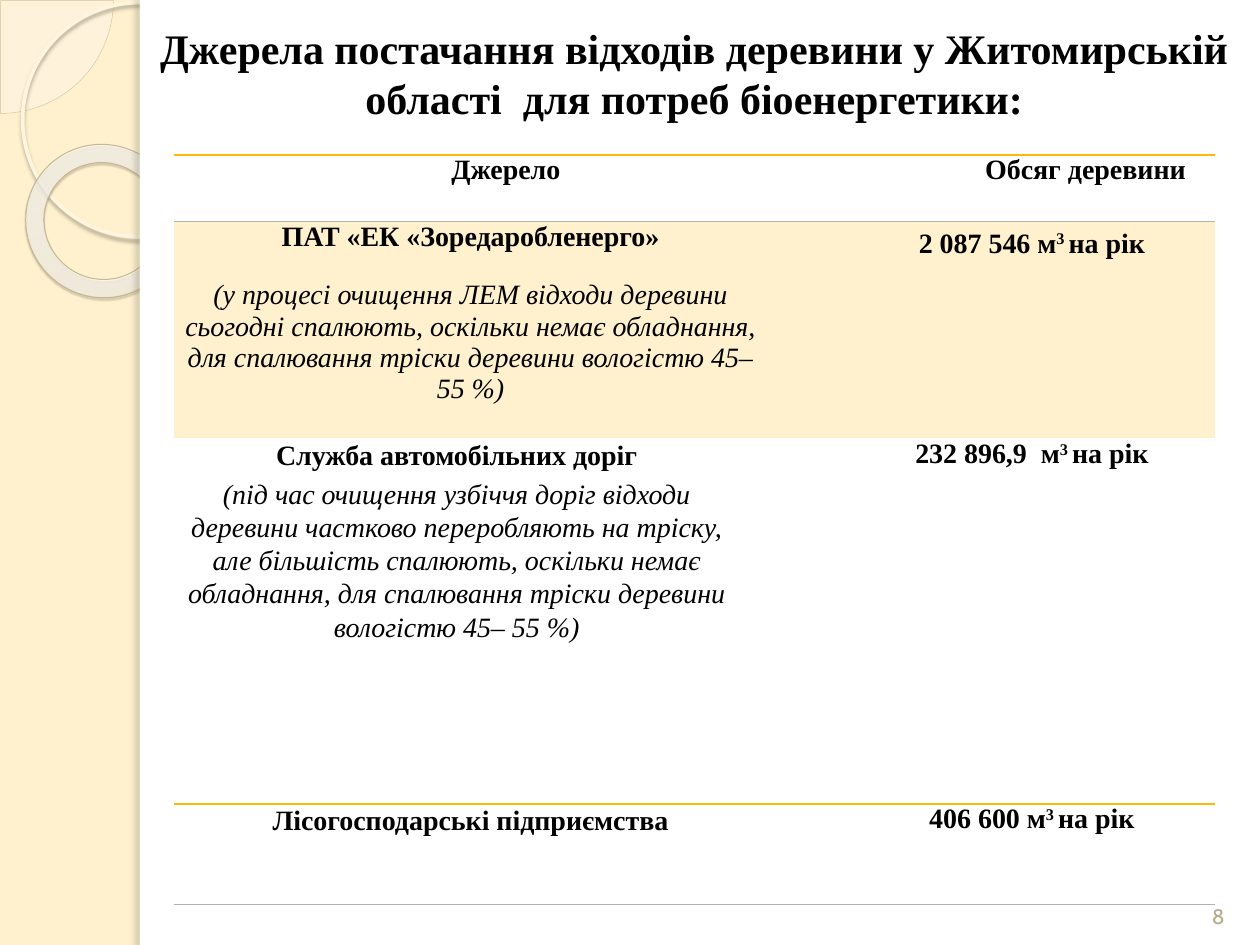
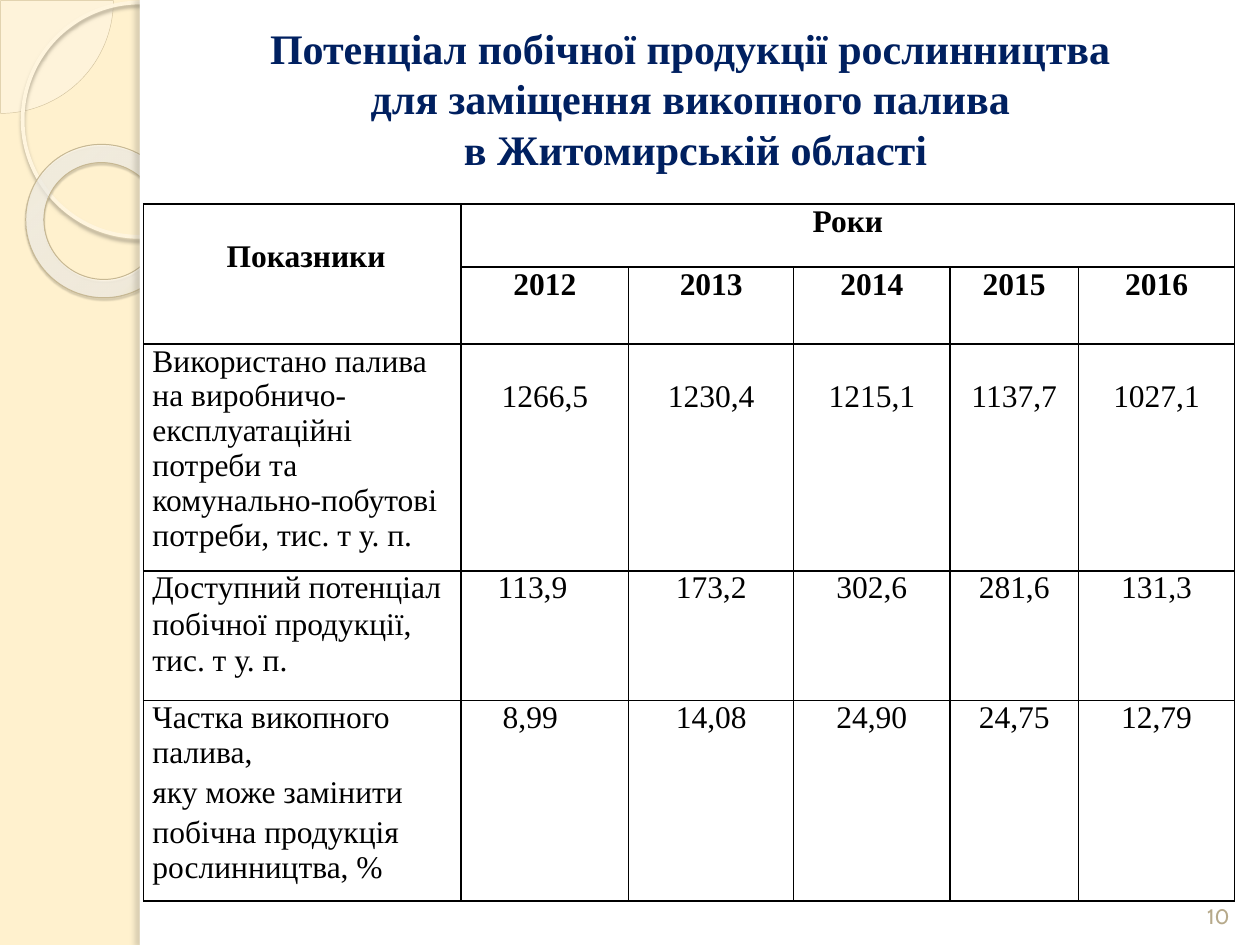
from lxml import etree
from pptx import Presentation
from pptx.dml.color import RGBColor
from pptx.enum.shapes import MSO_SHAPE
from pptx.enum.text import MSO_ANCHOR, PP_ALIGN
from pptx.oxml import parse_xml
from pptx.oxml.ns import nsdecls, qn
from pptx.util import Emu, Inches, Pt

LEFT, CENTER = PP_ALIGN.LEFT, PP_ALIGN.CENTER
BOTTOM = MSO_ANCHOR.BOTTOM
PIE, RING, DONUT, BAR = MSO_SHAPE.PIE, MSO_SHAPE.OVAL, MSO_SHAPE.DONUT, MSO_SHAPE.RECTANGLE

color = RGBColor.from_string
CREAM, WHITE, BLACK, NAVY = "FFF1CE", "FFFFFF", "000000", "002060"
GOLD, GRAY, PAGE_COLOR = "FEB80A", "B2B2B2", "B6A98A"
BODY_FONT, PAGE_FONT = "Times New Roman", "Cabin"
SIDEBAR = 1.11

# kind, box, fill, line (colour, width), shadow (colour, alpha, blur, distance, angle)
DECORATIONS = [
    (PIE, (-0.89, -0.89, 1.79, 1.79), "FEFAF4", ("D3C39F", 0.25), None),
    (RING, (0.18, 0.02, 1.86, 1.86), None, ("FFF5DE", 2.15), ("B0A68F", 85, 2, 2, 90)),
    (DONUT, (0.2, 1.15, 1.23, 1.21), None, ("C7B893", 0.58), ("5A5444", 35, 1, 1.2, 75)),
    (BAR, (SIDEBAR, 0, 0.08, 7.5), WHITE, None, ("736F63", 25, 3, 3, 180)),
    (BAR, (SIDEBAR, 0, 10 - SIDEBAR, 7.5), WHITE, None, None),
]
DONUT_STOPS = [(0, "FFFCF6", 70), (70, "FFFEFB", 55), (100, "F0D28E", 60)]


def write(frame, lines, size, text_color=BLACK, bold=False, align=CENTER,
          left=0, right=0, before=0, font_name=BODY_FONT):
    """One paragraph per line; text between ^ marks is superscript."""
    frame.word_wrap = True
    for index, line in enumerate(lines):
        paragraph = frame.paragraphs[0] if index == 0 else frame.add_paragraph()
        paragraph.alignment = align
        if index:
            paragraph.space_before = Pt(before)
        properties = paragraph._p.get_or_add_pPr()
        properties.set("marL", str(Inches(left)))
        properties.set("marR", str(Inches(right)))
        font = paragraph.font
        font.name, font.size, font.bold = font_name, Pt(size), bold
        font.color.rgb = color(text_color)
        for part, text in enumerate(line.split("^")):
            run = paragraph.add_run()
            run.text = text
            if part % 2:
                run._r.get_or_add_rPr().set("baseline", "30000")


def add_grid(slide, left, top, widths, heights):
    """Plain table without fills or margins."""
    frame = slide.shapes.add_table(len(heights), len(widths), Inches(left), Inches(top),
                                   Inches(sum(widths)), Inches(sum(heights)))
    table = frame.table
    table.first_row = table.horz_banding = False
    for column, width in zip(table.columns, widths):
        column.width = Inches(width)
    for row, height in zip(table.rows, heights):
        row.height = Inches(height)
    for cell in table.iter_cells():
        cell.margin_left = cell.margin_right = cell.margin_top = cell.margin_bottom = Emu(0)
        cell.fill.background()
    return table


presentation = Presentation()
presentation.slide_width, presentation.slide_height = Inches(10), Inches(7.5)

# Shared look: background, sidebar rings, title and page number
PAGES = [
    ("8", BLACK, (1.14, 0.13, 8.74, 0.91),
     ["Джерела постачання відходів деревини у Житомирській області  для потреб біоенергетики:"]),
    ("10", NAVY, (1.01, 0.13, 9.02, 1.31),
     ["Потенціал побічної продукції рослинництва ", "для заміщення викопного палива ",
      "в Житомирській області"]),
]
slides = []
for number, title_color, title_box, title_lines in PAGES:
    slide = presentation.slides.add_slide(presentation.slide_layouts[6])
    slides.append(slide)
    slide.background.fill.solid()
    slide.background.fill.fore_color.rgb = color(CREAM)

    for kind, box, fill, line, shadow in DECORATIONS:
        shape = slide.shapes.add_shape(kind, *map(Inches, box))
        shape.shadow.inherit = False
        shape_properties = shape._element.spPr
        if fill:
            shape.fill.solid()
            shape.fill.fore_color.rgb = color(fill)
        else:
            shape.fill.background()
        if line:
            shape.line.color.rgb = color(line[0])
            shape.line.width = Pt(line[1])
        else:
            shape.line.fill.background()
        if shadow:
            tint, alpha, blur, distance, angle = shadow
            shape_properties.find(qn("a:effectLst")).append(parse_xml(
                f'<a:outerShdw {nsdecls("a")} blurRad="{Pt(blur)}" dist="{Pt(distance)}" '
                f'dir="{angle * 60000}" algn="tl" rotWithShape="0"><a:srgbClr val="{tint}">'
                f'<a:alpha val="{alpha * 1000}"/></a:srgbClr></a:outerShdw>'))
        if kind == PIE:
            shape.adjustments[0], shape.adjustments[1] = 0, 54
            tint = shape_properties.find(qn("a:solidFill")).find(qn("a:srgbClr"))
            etree.SubElement(tint, qn("a:alpha")).set("val", "33000")
        if kind == DONUT:
            shape.rotation = 38.6
            shape.adjustments[0] = 0.12
            stops = "".join(
                f'<a:gs pos="{position * 1000}"><a:srgbClr val="{tint}">'
                f'<a:alpha val="{alpha * 1000}"/></a:srgbClr></a:gs>'
                for position, tint, alpha in DONUT_STOPS)
            shape_properties.replace(shape_properties.find(qn("a:noFill")), parse_xml(
                f'<a:gradFill {nsdecls("a")}><a:gsLst>{stops}</a:gsLst><a:path path="circle">'
                '<a:fillToRect l="-408000" t="-50000" r="508000" b="150000"/>'
                '</a:path></a:gradFill>'))

    title = slide.shapes.add_textbox(*map(Inches, title_box))
    write(title.text_frame, title_lines, 24, title_color, bold=True)
    page_number = slide.shapes.add_textbox(*map(Inches, (9.42, 6.9, 0.5, 0.52)))
    page_number.text_frame.vertical_anchor = BOTTOM
    write(page_number.text_frame, [number], 12, PAGE_COLOR, font_name=PAGE_FONT)

# Wood waste sources: lines, left and right indent, gap before the note
SOURCES = [
    (["Джерело"], 1.36, 1.36, 0, "Обсяг деревини"),
    (["ПАТ «ЕК «Зоредаробленерго»",
      "(у процесі очищення ЛЕМ відходи деревини сьогодні спалюють, оскільки немає обладнання, "
      "для спалювання тріски деревини вологістю 45– 55 %)"],
     0.09, 0.65, 15.5, "2 087 546 м^3 ^на рік"),
    (["Служба автомобільних доріг",
      "(під час очищення узбіччя доріг відходи деревини частково переробляють на тріску, але "
      "більшість спалюють, оскільки немає обладнання, для спалювання тріски деревини "
      "вологістю 45– 55 %)"],
     0.09, 0.87, 3.1, "232 896,9  м^3 ^на рік"),
    (["Лісогосподарські підприємства"], 0.09, 0.65, 0, "406 600 м^3 ^на рік"),
]
sources = add_grid(slides[0], 1.38, 1.23, [5.27, 2.99], [0.53, 1.72, 2.9, 0.8])
for row, (lines, left, right, gap, volume) in enumerate(SOURCES):
    source_cell, volume_cell = sources.cell(row, 0), sources.cell(row, 1)
    write(source_cell.text_frame, lines, 16, bold=True, left=left, right=right, before=gap)
    write(volume_cell.text_frame, [volume], 16, bold=True, left=0.09 if row else 0.94)
    for note in source_cell.text_frame.paragraphs[1:]:
        note.font.bold, note.font.italic = False, True
    if row >= 2:
        for paragraph in source_cell.text_frame.paragraphs:
            paragraph.line_spacing = 1.07
for column in range(2):
    band_cell = sources.cell(1, column)
    band_cell.fill.solid()
    band_cell.fill.fore_color.rgb = color(CREAM)
sources.cell(1, 1).margin_top = Inches(0.05)

# Crop by-product potential by year
YEARS = ["2012", "2013", "2014", "2015", "2016"]
INDICATORS = [
    (["Використано палива", "на виробничо-", "експлуатаційні потреби та комунально-побутові",
      "потреби, тис. т у. п."], 0, ["1266,5", "1230,4", "1215,1", "1137,7", "1027,1"]),
    (["Доступний потенціал", "побічної продукції,", "тис. т у. п."], 0.8,
     ["113,9", "173,2", "302,6", "281,6", "131,3"]),
    (["Частка викопного палива,", "яку може замінити", "побічна продукція рослинництва, %"], 3,
     ["8,99", "14,08", "24,90", "24,75", "12,79"]),
]
FIRST_YEAR_INDENTS = {3: 0.29, 4: 0.33}
potential = add_grid(slides[1], 1.14, 1.62, [2.52, 1.33, 1.31, 1.24, 1.02, 1.24],
                     [0.5, 0.61, 1.79, 1.03, 1.59])
potential.cell(0, 0).merge(potential.cell(1, 0))
potential.cell(0, 1).merge(potential.cell(0, 5))
potential.cell(0, 0).margin_top = Inches(0.28)
write(potential.cell(0, 0).text_frame, ["Показники"], 18, bold=True, left=0.06)
write(potential.cell(0, 1).text_frame, ["Роки"], 18, bold=True)
for column, year in enumerate(YEARS, 1):
    write(potential.cell(1, column).text_frame, [year], 18, bold=True)
for row, (lines, gap, values) in enumerate(INDICATORS, 2):
    write(potential.cell(row, 0).text_frame, lines, 18, align=LEFT, left=0.07, before=gap)
    for column, value in enumerate(values, 1):
        cell = potential.cell(row, column)
        indent = FIRST_YEAR_INDENTS.get(row, 0) if column == 1 else 0
        write(cell.text_frame, [value], 18, align=LEFT if indent else CENTER, left=indent)
        if row == 2:
            cell.margin_top = Inches(0.28)

# Cell borders: horizontal rules on the first table, a full grid on the second
gold, gray, black = (GOLD, 1.5), (GRAY, 0.5), (BLACK, 1)
SOURCE_RULES = [gold, gray, None, gold, gray]
for table, rules, side in [(sources, SOURCE_RULES, None), (potential, [black] * 6, black)]:
    for row in range(len(table.rows)):
        for column in range(len(table.columns)):
            cell_properties = table.cell(row, column)._tc.get_or_add_tcPr()
            edges = [("L", side), ("R", side), ("T", rules[row]), ("B", rules[row + 1])]
            for position, (edge, rule) in enumerate(edges):
                tint, width = rule or (WHITE, 0)
                paint = f'<a:solidFill><a:srgbClr val="{tint}"/></a:solidFill>'
                cell_properties.insert(position, parse_xml(
                    f'<a:ln{edge} {nsdecls("a")} w="{Pt(width)}">'
                    f'{paint if rule else "<a:noFill/>"}</a:ln{edge}>'))

presentation.save("out.pptx")
